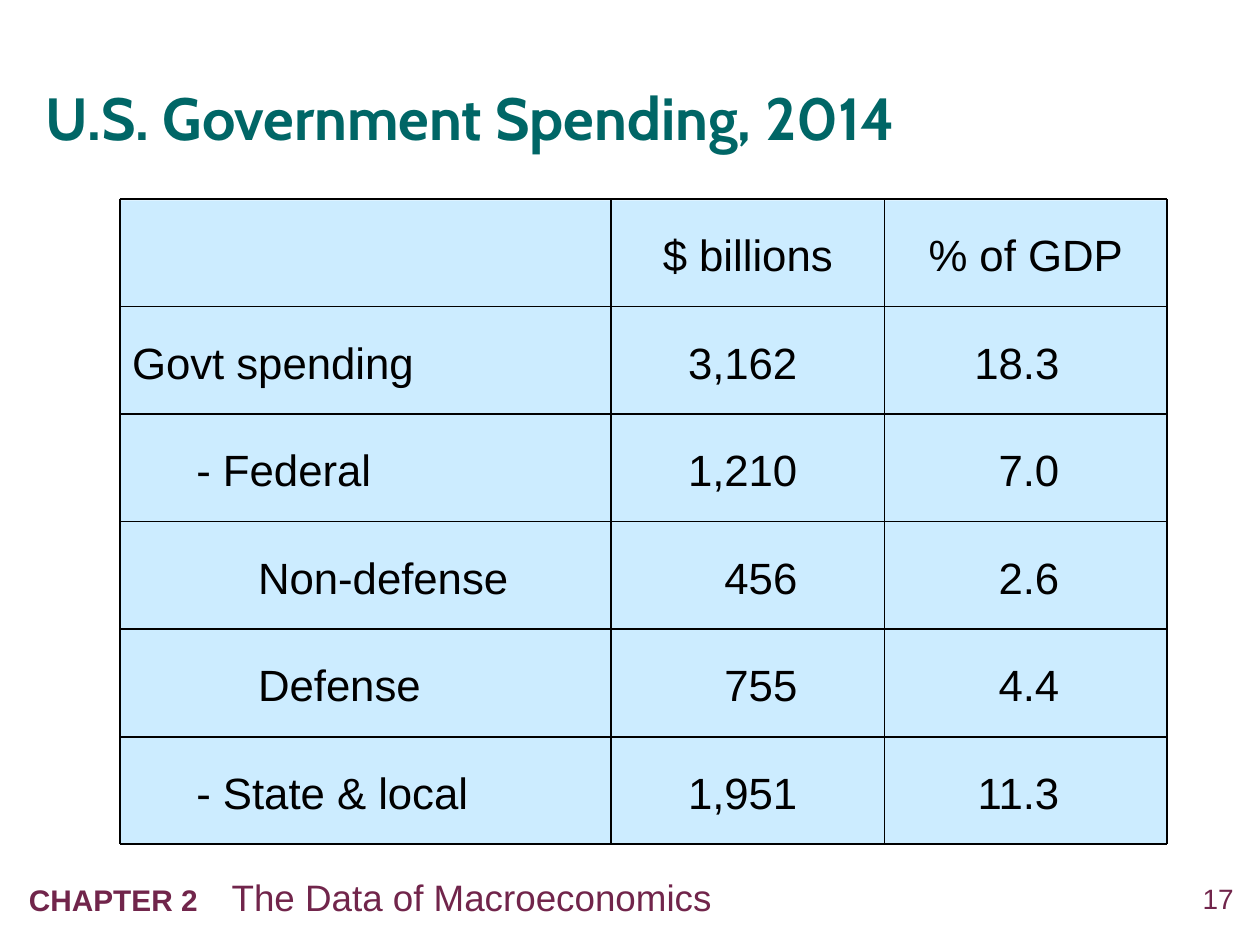
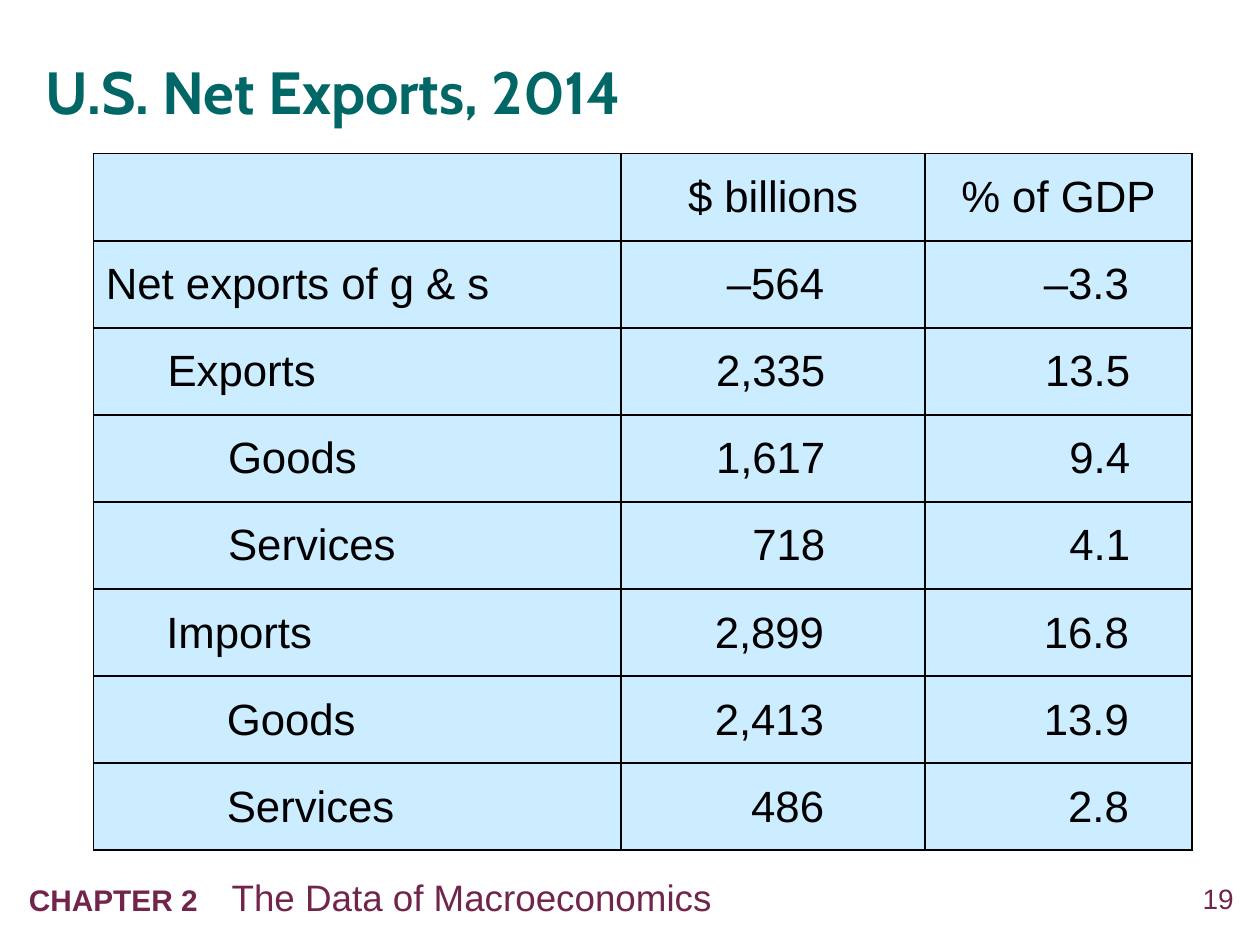
from lxml.etree import SubElement
from pptx import Presentation
from pptx.dml.color import RGBColor
from pptx.enum.shapes import MSO_CONNECTOR, MSO_SHAPE
from pptx.enum.text import MSO_ANCHOR, PP_ALIGN
from pptx.oxml.ns import qn
from pptx.util import Inches, Pt

TEAL = RGBColor(0x00, 0x66, 0x66)
PLUM = RGBColor(0x71, 0x25, 0x4B)
PALE_BLUE = RGBColor(0xCC, 0xEC, 0xFF)
BLACK = RGBColor(0x00, 0x00, 0x00)
BODY_FONT = "Arial"
TITLE_FONT = "Cabin"
HEADINGS = ("$ billions", "% of GDP")

SPENDING = [
    (0, "Govt spending", "3,162", "18.3"),
    (1, "- Federal", "1,210", "7.0"),
    (2, "Non-defense", "456", "2.6"),
    (2, "Defense", "755", "4.4"),
    (1, "- State & local", "1,951", "11.3"),
]
SPENDING_COLUMNS = (0.95, 4.85, 7.02, 9.26)
SPENDING_TOP = 1.58
SPENDING_ROW = 5.12 / 6
LABEL_STOPS = (("l", 0.51), ("l", 1.0))
VALUE_STOPS = (("dec", 1.38), ("dec", 1.0))

NET_EXPORTS = [(0, "Net exports of g & s", "–564", "–3.3")]
EXPORTS = [
    (1, "Exports", "2,335", "13.5"),
    (2, "Goods", "1,617", "9.4"),
    (2, "Services", "718", "4.1"),
]
IMPORTS = [
    (1, "Imports", "2,899", "16.8"),
    (2, "Goods", "2,413", "13.9"),
    (2, "Services", "486", "2.8"),
]
TRADE_WIDTHS = (4.19, 2.41, 2.12)
TRADE_ROW = 5.53 / 8
VALUE_MARGINS = (0.8, 0.5)


def add_run(para, text, size, color, font=BODY_FONT, bold=False):
    span = para.add_run()
    span.text = text
    span.font.name = font
    span.font.size = Pt(size)
    span.font.bold = bold
    span.font.color.rgb = color


def add_box(page, left, top, width, height, inset=True):
    box = page.shapes.add_textbox(
        Inches(left), Inches(top), Inches(width), Inches(height))
    frame = box.text_frame
    frame.word_wrap = True
    if not inset:
        frame.margin_left = frame.margin_right = 0
        frame.margin_top = frame.margin_bottom = 0
    return frame


def add_title(page, text, top, height):
    frame = add_box(page, 0.36, top, 9.18, height, inset=False)
    frame.vertical_anchor = MSO_ANCHOR.MIDDLE
    para = frame.paragraphs[0]
    para.line_spacing = 1.05
    add_run(para, text, 34, TEAL, TITLE_FONT, bold=True)


def add_tab_stops(para, stops):
    tabs = SubElement(para._p.get_or_add_pPr(), qn("a:tabLst"))
    for alignment, position in stops:
        SubElement(tabs, qn("a:tab"), pos=str(Inches(position)), algn=alignment)


def add_footer(page, number):
    para = add_box(page, 9.24, 7.0, 0.55, 0.32, inset=False).paragraphs[0]
    para.alignment = PP_ALIGN.RIGHT
    add_run(para, number, 16, PLUM)
    para = add_box(page, 0.13, 6.89, 8.18, 0.45).paragraphs[0]
    add_tab_stops(para, [("l", 1.61)])
    add_run(para, "CHAPTER 2\t", 17, PLUM, bold=True)
    add_run(para, "The Data of Macroeconomics", 21, PLUM)


def add_entry(page, row, column, text, stops=(), alignment=PP_ALIGN.LEFT):
    left, right = SPENDING_COLUMNS[column:column + 2]
    frame = add_box(page, left, SPENDING_TOP + row * SPENDING_ROW,
                    right - left, SPENDING_ROW)
    frame.vertical_anchor = MSO_ANCHOR.MIDDLE
    para = frame.paragraphs[0]
    para.alignment = alignment
    para.line_spacing = 1.05
    space = SubElement(para._p.get_or_add_pPr(), qn("a:spcBef"))
    SubElement(space, qn("a:spcPct"), val="45000")
    if stops:
        add_tab_stops(para, stops)
    add_run(para, text, 25, BLACK)


def add_rule(page, left, top, right, bottom):
    rule = page.shapes.add_connector(
        MSO_CONNECTOR.STRAIGHT,
        Inches(left), Inches(top), Inches(right), Inches(bottom))
    rule.line.color.rgb = BLACK
    rule.line.width = Pt(1)
    SubElement(rule._element.spPr, qn("a:effectLst"))
    return rule


def add_panel(page):
    panel = page.shapes.add_shape(
        MSO_SHAPE.RECTANGLE,
        Inches(0.96), Inches(1.59), Inches(8.3), Inches(5.1))
    panel.shadow.inherit = False
    panel.fill.solid()
    panel.fill.fore_color.rgb = PALE_BLUE
    panel.line.fill.background()
    return panel


def add_spending_grid(page):
    panel = add_panel(page)
    for column, heading in enumerate(HEADINGS, 1):
        add_entry(page, 0, column, heading, alignment=PP_ALIGN.CENTER)
    for row, (level, label, *values) in enumerate(SPENDING, 1):
        add_entry(page, row, 0, "\t" * level + label, LABEL_STOPS)
        for column, (value, stop) in enumerate(zip(values, VALUE_STOPS), 1):
            add_entry(page, row, column, "\t" + value, [stop])

    row_count = len(SPENDING) + 1
    left, right = SPENDING_COLUMNS[0], SPENDING_COLUMNS[-1]
    for row in range(row_count + 1):
        edge = SPENDING_TOP + row * SPENDING_ROW
        rule = add_rule(page, left, edge, right, edge)
        if row == row_count // 2:
            rule.begin_connect(panel, 1)
            rule.end_connect(panel, 3)
    bottom = SPENDING_TOP + row_count * SPENDING_ROW
    for edge in SPENDING_COLUMNS:
        add_rule(page, edge, SPENDING_TOP, edge, bottom)


def style_cell(cell, filled):
    properties = cell._tc.get_or_add_tcPr()
    for side in ("a:lnL", "a:lnR", "a:lnT", "a:lnB"):
        border = SubElement(properties, qn(side), w=str(Pt(1)))
        if filled:
            fill = SubElement(border, qn("a:solidFill"))
            SubElement(fill, qn("a:srgbClr"), val=str(BLACK))
        else:
            SubElement(border, qn("a:noFill"))
    if filled:
        cell.fill.solid()
        cell.fill.fore_color.rgb = PALE_BLUE
    else:
        cell.fill.background()
    cell.vertical_anchor = MSO_ANCHOR.MIDDLE


def write_cell(cell, text, alignment):
    para = cell.text_frame.paragraphs[0]
    para.alignment = alignment
    add_run(para, text, 25, BLACK)


def add_trade_table(page, left, top, row_count, filled=False):
    table = page.shapes.add_table(
        row_count, len(TRADE_WIDTHS), Inches(left), Inches(top),
        Inches(sum(TRADE_WIDTHS)), Inches(TRADE_ROW * row_count)).table
    table.first_row = False
    table.horz_banding = False
    for column, width in zip(table.columns, TRADE_WIDTHS):
        column.width = Inches(width)
    for row in table.rows:
        row.height = Inches(TRADE_ROW)
        for cell in row.cells:
            style_cell(cell, filled)
    return table


def write_accounts(table, accounts, first_row=0):
    for row, (level, label, *values) in enumerate(accounts, first_row):
        label_cell = table.cell(row, 0)
        label_cell.margin_left = Inches(0.1 + level * 0.48)
        write_cell(label_cell, label, PP_ALIGN.LEFT)
        for column, (value, margin) in enumerate(zip(values, VALUE_MARGINS), 1):
            cell = table.cell(row, column)
            cell.margin_right = Inches(margin)
            write_cell(cell, value, PP_ALIGN.RIGHT)


def add_trade_tables(page):
    summary = add_trade_table(page, 0.74, 1.22, 8, filled=True)
    for column, heading in enumerate(HEADINGS, 1):
        write_cell(summary.cell(0, column), heading, PP_ALIGN.CENTER)
    write_accounts(summary, NET_EXPORTS, first_row=1)
    for accounts, left, top in ((EXPORTS, 0.75, 2.6), (IMPORTS, 0.74, 4.68)):
        write_accounts(add_trade_table(page, left, top, len(accounts)), accounts)


def add_page(deck, title, title_top, title_height, number):
    page = deck.slides.add_slide(deck.slide_layouts[6])
    add_footer(page, number)
    add_title(page, title, title_top, title_height)
    return page


def main():
    deck = Presentation()
    deck.slide_width = Inches(10)
    deck.slide_height = Inches(7.5)

    page = add_page(deck, "U.S. Government Spending, 2014", 0.26, 1.31, "17")
    add_spending_grid(page)

    page = add_page(deck, "U.S. Net Exports, 2014", 0.33, 0.76, "19")
    add_trade_tables(page)

    deck.save("out.pptx")


if __name__ == "__main__":
    main()
